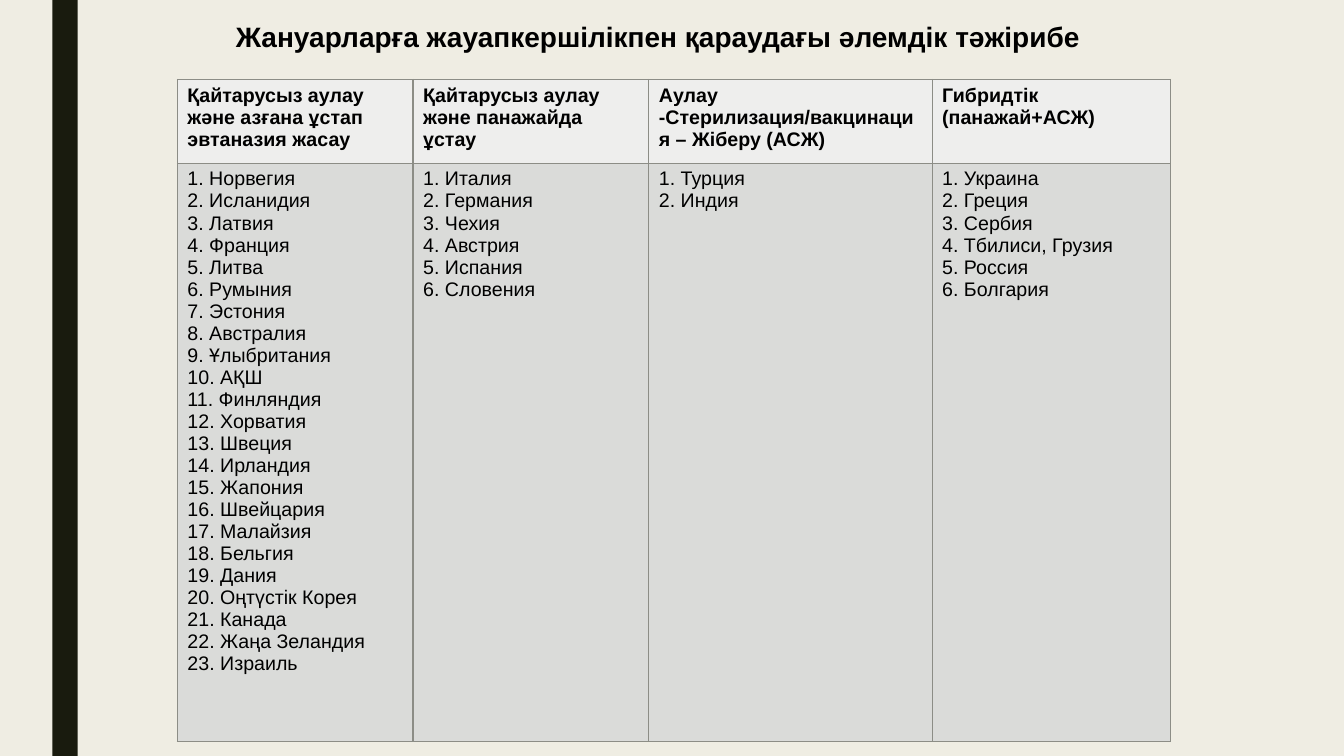
import dataclasses

import lxml.etree
import pptx
import pptx.dml.color
import pptx.enum.shapes
import pptx.enum.text
import pptx.oxml.ns
import pptx.util

Cm = pptx.util.Cm
Pt = pptx.util.Pt


@dataclasses.dataclass(frozen=True)
class Theme:
    font: str = "Arial"
    back: str = "EFEDE3"
    bar: str = "191B0E"
    ink: str = "000000"
    head: str = "EEEEED"
    body: str = "DADBD9"
    rule: str = "8C8D86"
    title: int = 20
    text: int = 14
    line: int = 1


THEME = Theme()
WIDTHS = (5.94, 5.94, 7.14, 6)
HEIGHTS = (2.11, 14.58)
GROUPS = (
    ("Қайтарусыз аулау және азғана ұстап эвтаназия жасау",
     ("Норвегия", "Исланидия", "Латвия", "Франция", "Литва", "Румыния",
      "Эстония", "Австралия", "Ұлыбритания", "АҚШ", "Финляндия", "Хорватия",
      "Швеция", "Ирландия", "Жапония", "Швейцария", "Малайзия", "Бельгия",
      "Дания", "Оңтүстік Корея", "Канада", "Жаңа Зеландия", "Израиль")),
    ("Қайтарусыз аулау және панажайда ұстау",
     ("Италия", "Германия", "Чехия", "Австрия", "Испания", "Словения")),
    ("Аулау -Стерилизация/вакцинация – Жіберу (АСЖ)",
     ("Турция", "Индия")),
    ("Гибридтік (панажай+АСЖ)",
     ("Украина", "Греция", "Сербия", "Тбилиси, Грузия", "Россия", "Болгария")),
)


def tint(fill, code):
    fill.solid()
    fill.fore_color.rgb = pptx.dml.color.RGBColor.from_string(code)


def write(frame, lines, size, bold):
    frame.word_wrap = True
    for i, line in enumerate(lines):
        para = frame.paragraphs[0] if i == 0 else frame.add_paragraph()
        run = para.add_run()
        run.text = line
        run.font.name = THEME.font
        run.font.size = Pt(size)
        run.font.bold = bold
        tint(run.font.fill, THEME.ink)


def edge(cell):
    props = cell._tc.get_or_add_tcPr()
    name = pptx.oxml.ns.qn
    for i, side in enumerate(("lnL", "lnR", "lnT", "lnB")):
        line = lxml.etree.Element(name("a:" + side), w=str(Pt(THEME.line)))
        fill = lxml.etree.SubElement(line, name("a:solidFill"))
        lxml.etree.SubElement(fill, name("a:srgbClr"), val=THEME.rule)
        props.insert(i, line)


def add_bar(slide, box):
    kind = pptx.enum.shapes.MSO_SHAPE.RECTANGLE
    bar = slide.shapes.add_shape(kind, *map(Cm, box))
    bar.shadow.inherit = False
    tint(bar.fill, THEME.bar)
    bar.line.fill.background()


def add_title(slide, box):
    frame = slide.shapes.add_textbox(*map(Cm, box)).text_frame
    lines = ("Жануарларға жауапкершілікпен қараудағы әлемдік тәжірибе",)
    write(frame, lines, THEME.title, True)
    frame.vertical_anchor = pptx.enum.text.MSO_ANCHOR.TOP
    para = frame.paragraphs[0]
    para.alignment = pptx.enum.text.PP_ALIGN.CENTER
    para.line_spacing = 0.89


def add_grid(slide, box):
    shape = slide.shapes.add_table(len(HEIGHTS), len(WIDTHS), *map(Cm, box))
    grid = shape.table
    for row, high in zip(grid.rows, HEIGHTS):
        row.height = Cm(high)
    for c, (wide, (head, lands)) in enumerate(zip(WIDTHS, GROUPS)):
        grid.columns[c].width = Cm(wide)
        items = [f"{n}. {land}" for n, land in enumerate(lands, 1)]
        parts = (([head], THEME.head, True), (items, THEME.body, False))
        for r, (lines, color, bold) in enumerate(parts):
            cell = grid.cell(r, c)
            write(cell.text_frame, lines, THEME.text, bold)
            tint(cell.fill, color)
            edge(cell)


def main():
    deck = pptx.Presentation()
    deck.slide_width, deck.slide_height = Cm(33.87), Cm(19.05)
    slide = deck.slides.add_slide(deck.slide_layouts[6])
    tint(slide.background.fill, THEME.back)
    add_bar(slide, (1.32, 0, 0.64, 19.05))
    add_title(slide, (1.98, 0.46, 29.21, 1.55))
    add_grid(slide, (4.47, 2, sum(WIDTHS), sum(HEIGHTS)))
    deck.save("out.pptx")


if __name__ == "__main__":
    main()
